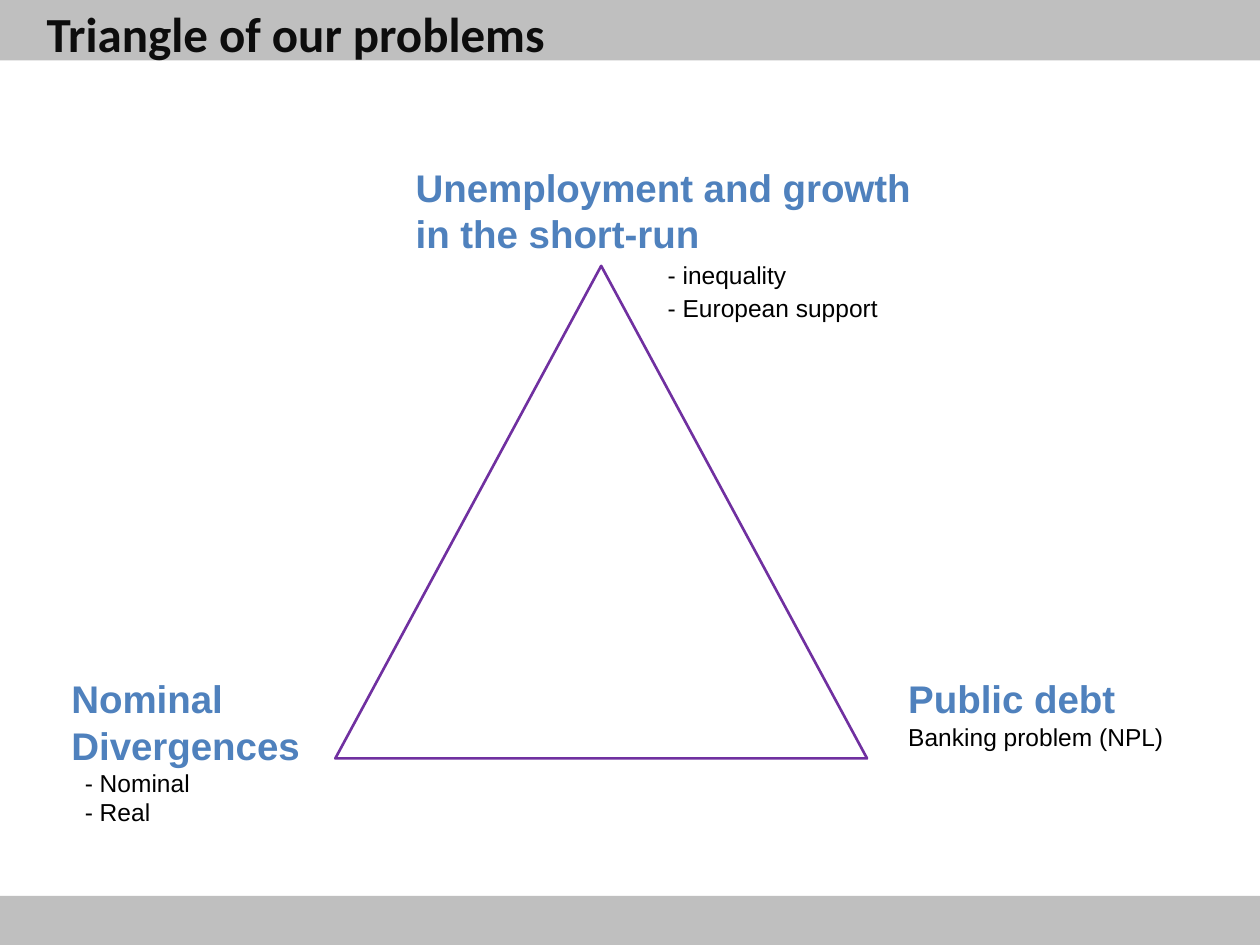
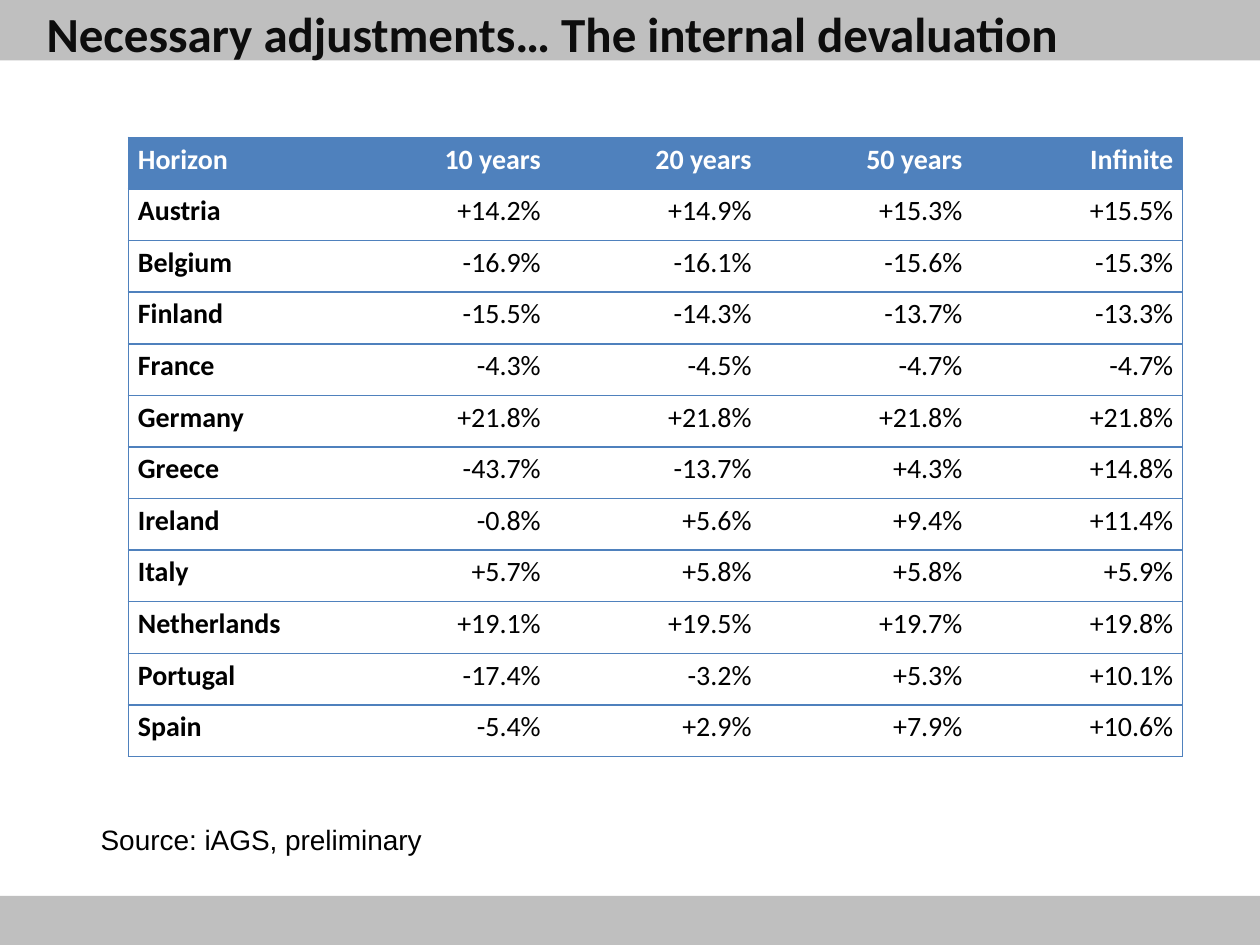
import lxml.etree
import pptx
import pptx.dml.color
import pptx.enum.shapes
import pptx.enum.text
import pptx.oxml.ns
import pptx.util

Cm, Pt = pptx.util.Cm, pptx.util.Pt
SHAPE = pptx.enum.shapes.MSO_SHAPE
ALIGN = pptx.enum.text.PP_ALIGN
ANCHOR = pptx.enum.text.MSO_ANCHOR
qn = pptx.oxml.ns.qn

# Shared style
WIDTH, HEIGHT = 25.4, 19.05
GREY, INK, BLACK, WHITE = "BFBFBF", "0D0D0D", "000000", "FFFFFF"
BLUE, PURPLE = "4F81BD", "7030A0"
BODY, HEAD = "Arial", "Calibri"

# Adjustment needed by country and horizon
ADJUSTMENTS = [
    ("Horizon", "10 years", "20 years", "50 years", "Infinite"),
    ("Austria", "+14.2%", "+14.9%", "+15.3%", "+15.5%"),
    ("Belgium", "-16.9%", "-16.1%", "-15.6%", "-15.3%"),
    ("Finland", "-15.5%", "-14.3%", "-13.7%", "-13.3%"),
    ("France", "-4.3%", "-4.5%", "-4.7%", "-4.7%"),
    ("Germany", "+21.8%", "+21.8%", "+21.8%", "+21.8%"),
    ("Greece", "-43.7%", "-13.7%", "+4.3%", "+14.8%"),
    ("Ireland", "-0.8%", "+5.6%", "+9.4%", "+11.4%"),
    ("Italy", "+5.7%", "+5.8%", "+5.8%", "+5.9%"),
    ("Netherlands", "+19.1%", "+19.5%", "+19.7%", "+19.8%"),
    ("Portugal", "-17.4%", "-3.2%", "+5.3%", "+10.1%"),
    ("Spain", "-5.4%", "+2.9%", "+7.9%", "+10.6%"),
]


def rgb(color):
    return pptx.dml.color.RGBColor.from_string(color)


def set_font(p, name, size, color, bold=False):
    p.font.name, p.font.size, p.font.bold = name, Pt(size), bold
    p.font.color.rgb = rgb(color)


def add_shape(s, kind, x, y, w, h, fill, line=None):
    sp = s.shapes.add_shape(kind, Cm(x), Cm(y), Cm(w), Cm(h))
    sp.shadow.inherit = False
    sp.fill.solid()
    sp.fill.fore_color.rgb = rgb(fill)
    if line:
        sp.line.color.rgb = rgb(line)
        sp.line.width = Pt(1.5)
    else:
        sp.line.fill.background()


def add_text(s, x, y, w, h, text, name, size, color, bold=False):
    tf = s.shapes.add_textbox(Cm(x), Cm(y), Cm(w), Cm(h)).text_frame
    tf.word_wrap = True
    p = tf.paragraphs[0]
    p.text = text
    set_font(p, name, size, color, bold)
    return tf


def add_corner(s, x, y, w, h, heading, details, indent=0, gap=0):
    """Blue heading at a triangle corner, with its details below."""
    tf = add_text(s, x, y, w, h, heading, BODY, 22, BLUE, True)
    for detail in details:
        p = tf.add_paragraph()
        p.text = detail
        pPr = p._p.get_or_add_pPr()
        pPr.set("marL", str(Cm(indent)))
        pPr.set("indent", "0")
        p.space_before = Pt(gap)
        set_font(p, BODY, 14, BLACK)


def add_slide(prs, title):
    s = prs.slides.add_slide(prs.slide_layouts[6])
    add_shape(s, SHAPE.RECTANGLE, 0, 0, WIDTH, 1.22, GREY)
    add_shape(s, SHAPE.RECTANGLE, 0, 18.06, WIDTH, 0.99, GREY)
    tf = add_text(s, 0.69, 0, 24.21, 1.32, title, HEAD, 28, INK, True)
    tf.vertical_anchor = ANCHOR.MIDDLE
    return s


def set_borders(cell, sides):
    """Draw the given sides (of L, R, T, B) and clear the others."""
    tcPr = cell._tc.get_or_add_tcPr()
    for side in "LRTB":
        ln = lxml.etree.SubElement(tcPr, qn("a:ln" + side), w=str(Pt(1)))
        if side in sides:
            fill = lxml.etree.SubElement(ln, qn("a:solidFill"))
            lxml.etree.SubElement(fill, qn("a:srgbClr"), val=BLUE)
        else:
            lxml.etree.SubElement(ln, qn("a:noFill"))


def add_table(s, x, y, col_width, row_height, rows):
    n_rows, n_cols = len(rows), len(rows[0])
    table = s.shapes.add_table(n_rows, n_cols, Cm(x), Cm(y), Cm(col_width * n_cols),
                               Cm(row_height * n_rows)).table
    table.horz_banding = False
    for col in table.columns:
        col.width = Cm(col_width)
    for i, row in enumerate(rows):
        table.rows[i].height = Cm(row_height)
        for j, text in enumerate(row):
            cell = table.cell(i, j)
            cell.margin_left = cell.margin_right = Cm(0.19)
            cell.margin_top = cell.margin_bottom = 0
            first, last = j == 0, j == n_cols - 1
            set_borders(cell, "TB" + "L" * first + "R" * last)
            if i == 0:
                cell.fill.solid()
                cell.fill.fore_color.rgb = rgb(BLUE)
            else:
                cell.fill.background()
            p = cell.text_frame.paragraphs[0]
            p.text = text
            p.alignment = ALIGN.JUSTIFY if first else ALIGN.RIGHT
            p.line_spacing = 1.15
            set_font(p, HEAD, 16, BLACK if i else WHITE, i == 0 or first)


def main():
    prs = pptx.Presentation()
    prs.slide_width, prs.slide_height = Cm(WIDTH), Cm(HEIGHT)

    # Triangle with a problem at each corner
    s = add_slide(prs, "Triangle of our problems")
    add_shape(s, SHAPE.ISOSCELES_TRIANGLE, 6.76, 5.36, 10.72, 9.93, WHITE, PURPLE)
    add_corner(s, 8.13, 3.18, 10.72, 3.43, "Unemployment and growth in the short-run",
               ["- inequality", "- European support"], indent=5.08, gap=2)
    add_corner(s, 18.06, 13.49, 7.34, 1.8, "Public debt", ["Banking problem (NPL)"])
    add_corner(s, 1.19, 13.49, 6.35, 3.33, "Nominal Divergences",
               ["- Nominal", "- Real"], indent=0.27)

    # Table of adjustments
    s = add_slide(prs, "Necessary adjustments… The internal devaluation")
    add_table(s, 2.59, 2.77, 4.25, 1.04, ADJUSTMENTS)
    add_text(s, 1.78, 16.46, 14.68, 0.94, "Source: iAGS, preliminary", BODY, 16, BLACK)

    prs.save("out.pptx")


if __name__ == "__main__":
    main()
